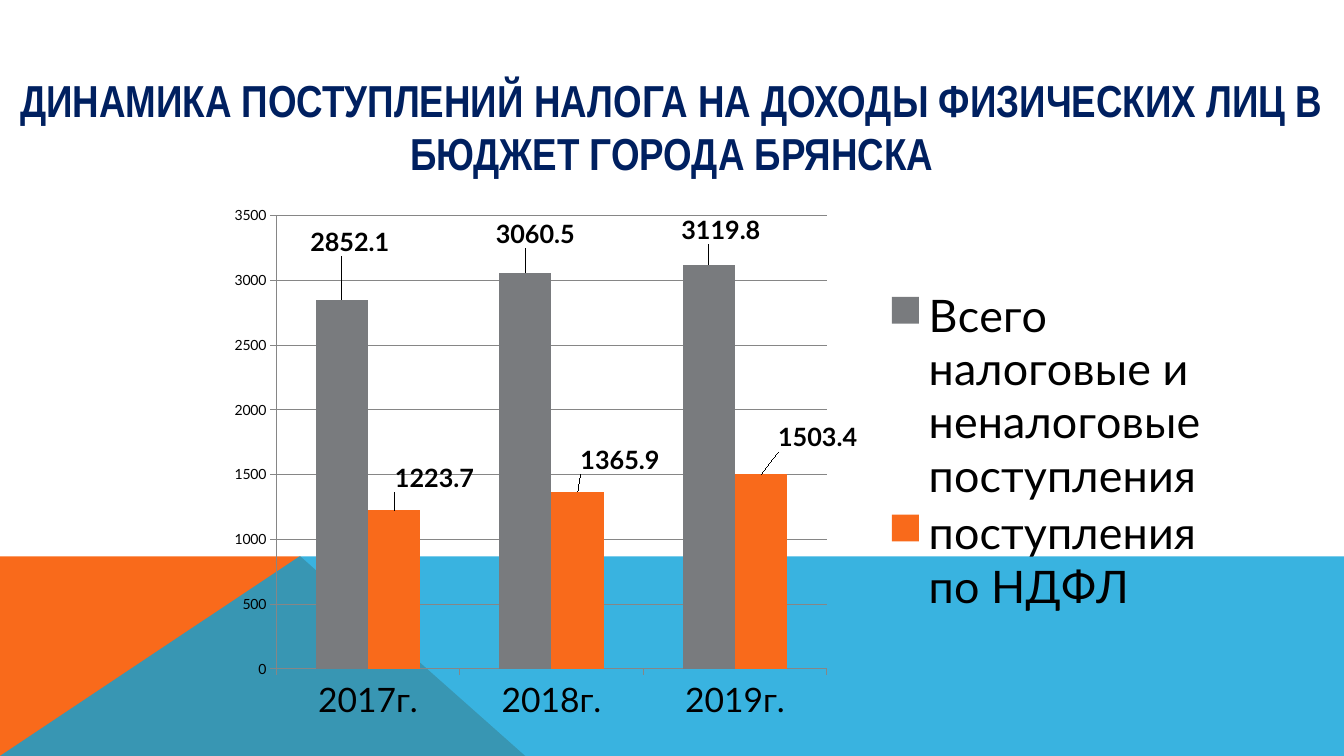
"""Build the slide on personal income tax receipts in the budget of Bryansk."""
from dataclasses import dataclass

from lxml import etree
from pptx import Presentation
from pptx.chart.chart import Chart
from pptx.chart.data import CategoryChartData
from pptx.dml.color import RGBColor
from pptx.dml.fill import FillFormat
from pptx.enum.chart import XL_CHART_TYPE as ChartType
from pptx.enum.chart import XL_LABEL_POSITION as LabelPosition
from pptx.enum.chart import XL_LEGEND_POSITION as LegendPosition
from pptx.enum.chart import XL_TICK_MARK as TickMark
from pptx.enum.text import MSO_ANCHOR, MSO_AUTO_SIZE, PP_ALIGN
from pptx.oxml.ns import qn
from pptx.slide import Slide
from pptx.util import Inches, Pt

CHART_WIDTH, CHART_HEIGHT = 10.31, 5.4
BLACK, NAVY, GRID_GREY = "000000", "002060", "868686"
YEARS = ("2017г.", "2018г.", "2019г.")


@dataclass(frozen=True)
class Band:
    points: tuple[tuple[float, float], ...]
    color: str
    opacity: int = 100


@dataclass(frozen=True)
class Receipts:
    name: str
    values: tuple[float, ...]
    color: str
    label_shifts: tuple[tuple[float, float], ...]


BANDS = (
    Band(((0, 7.5), (0, 5.52), (2.98, 5.52), (5.21, 7.5)), "F96A1B"),
    Band(((0, 7.5), (2.97, 5.52), (13.33, 5.52), (13.33, 7.5)), "08A1D9", 80),
)
RECEIPTS = (
    Receipts("Всего налоговые и неналоговые поступления", (2852.1, 3060.5, 3119.8),
             "797B7E", ((0.08, -0.39), (0.1, -0.2), (0.12, -0.16))),
    Receipts("поступления по НДФЛ", (1223.7, 1365.9, 1503.4),
             "F96A1B", ((0.4, -0.14), (0.42, -0.13), (0.56, -0.18))),
)


def rgb(color: str) -> RGBColor:
    return RGBColor.from_string(color)


def paint(fill: FillFormat, color: str) -> None:
    fill.solid()
    fill.fore_color.rgb = rgb(color)


def draw_band(slide: Slide, band: Band) -> None:
    corners = [(Inches(x), Inches(y)) for x, y in band.points]
    builder = slide.shapes.build_freeform(*corners[0], scale=1.0)
    builder.add_line_segments(corners[1:], close=True)
    shape = builder.convert_to_shape()
    shape.shadow.inherit = False
    shape.line.fill.background()
    paint(shape.fill, band.color)
    if band.opacity < 100:
        tint = shape.fill._xPr.find(".//" + qn("a:srgbClr"))
        etree.SubElement(tint, qn("a:alpha"), val=str(band.opacity * 1000))


def write_title(slide: Slide) -> None:
    title = slide.shapes.title
    title.left, title.top = Inches(0), Inches(0.7)
    title.width, title.height = Inches(13.33), Inches(1.1)
    frame = title.text_frame
    frame.text = "ДИНАМИКА ПОСТУПЛЕНИЙ НАЛОГА НА ДОХОДЫ ФИЗИЧЕСКИХ ЛИЦ В БЮДЖЕТ ГОРОДА БРЯНСКА"
    frame.word_wrap = True
    frame.auto_size = MSO_AUTO_SIZE.NONE
    frame.vertical_anchor = MSO_ANCHOR.MIDDLE
    heading = frame.paragraphs[0]
    heading.alignment = PP_ALIGN.CENTER
    heading.font.name, heading.font.size = "Arial Narrow", Pt(32)
    heading.font.bold = True
    heading.font.color.rgb = rgb(NAVY)


def set_layout(parent: etree._Element, index: int, left: float, top: float,
               size: tuple[float, float] | None = None, inner: bool = False) -> None:
    """Place a chart part by inches, as a shift when it has no size."""
    for old in parent.findall(qn("c:layout")):
        parent.remove(old)
    layout = parent.makeelement(qn("c:layout"), {})
    parent.insert(index, layout)
    manual = etree.SubElement(layout, qn("c:manualLayout"))
    settings: list[tuple[str, object]] = []
    if inner:
        settings.append(("layoutTarget", "inner"))
    if size:
        settings += [("xMode", "edge"), ("yMode", "edge")]
    settings += [("x", left / CHART_WIDTH), ("y", top / CHART_HEIGHT)]
    if size:
        settings += [("w", size[0] / CHART_WIDTH), ("h", size[1] / CHART_HEIGHT)]
    for tag, value in settings:
        etree.SubElement(manual, qn(f"c:{tag}"), val=str(value))


def format_axes(chart: Chart) -> None:
    years, amounts = chart.category_axis, chart.value_axis
    for axis in (years, amounts):
        axis.major_tick_mark = TickMark.OUTSIDE
        axis.minor_tick_mark = TickMark.NONE
        axis.format.line.color.rgb = rgb(GRID_GREY)
    years.tick_labels.font.size = Pt(24)
    amounts.minimum_scale, amounts.maximum_scale, amounts.major_unit = 0, 3500, 500
    amounts.has_major_gridlines = True
    amounts.major_gridlines.format.line.color.rgb = rgb(GRID_GREY)


def format_series(chart: Chart) -> None:
    for series, receipts in zip(chart.plots[0].series, RECEIPTS):
        paint(series.format.fill, receipts.color)
        series.data_labels.show_value = True
        series.data_labels.font.size = Pt(18)
        series.data_labels.font.bold = True
        for number in range(len(YEARS)):
            label = series.points[number].data_label
            label.font.size, label.font.bold = Pt(18), True
            label.position = LabelPosition.OUTSIDE_END
        labels = series._element.findall(".//" + qn("c:dLbl"))
        for label, shift in zip(labels, receipts.label_shifts):
            set_layout(label, 1, *shift)


def add_receipts_chart(slide: Slide) -> None:
    data = CategoryChartData()
    data.categories = YEARS
    for receipts in RECEIPTS:
        data.add_series(receipts.name, receipts.values)
    chart = slide.shapes.add_chart(
        ChartType.COLUMN_CLUSTERED, Inches(1.78), Inches(1.74),
        Inches(CHART_WIDTH), Inches(CHART_HEIGHT), data).chart
    chart.has_title = False
    chart.font.name, chart.font.size = "Lato", Pt(10)
    chart.font.color.rgb = rgb(BLACK)
    plot = chart.plots[0]
    plot.gap_width, plot.overlap, plot.vary_by_categories = 150, 0, False
    format_axes(chart)
    format_series(chart)
    chart.has_legend = True
    chart.legend.position = LegendPosition.RIGHT
    chart.legend.include_in_layout = False
    chart.legend.font.size = Pt(32)
    set_layout(chart.legend._element, 1, 6.95, 1.08, (3.3, 3.3))
    plot_area = chart._chartSpace.find(".//" + qn("c:plotArea"))
    set_layout(plot_area, 0, 0.96, 0.4, (5.46, 4.5), inner=True)


def main() -> None:
    deck = Presentation()
    deck.slide_width, deck.slide_height = Inches(13.33), Inches(7.5)
    slide = deck.slides.add_slide(deck.slide_layouts.get_by_name("Title Only"))
    for band in BANDS:
        draw_band(slide, band)
    write_title(slide)
    add_receipts_chart(slide)
    deck.save("out.pptx")


if __name__ == "__main__":
    main()
